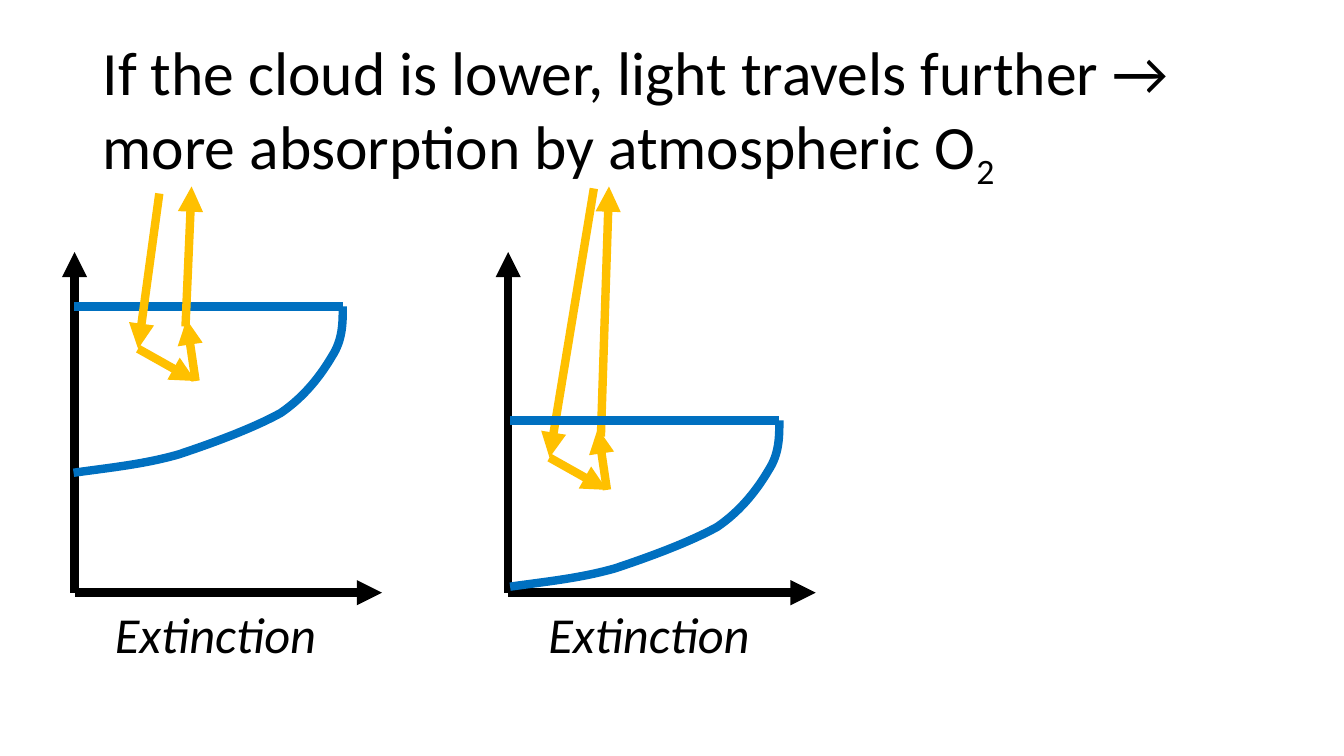
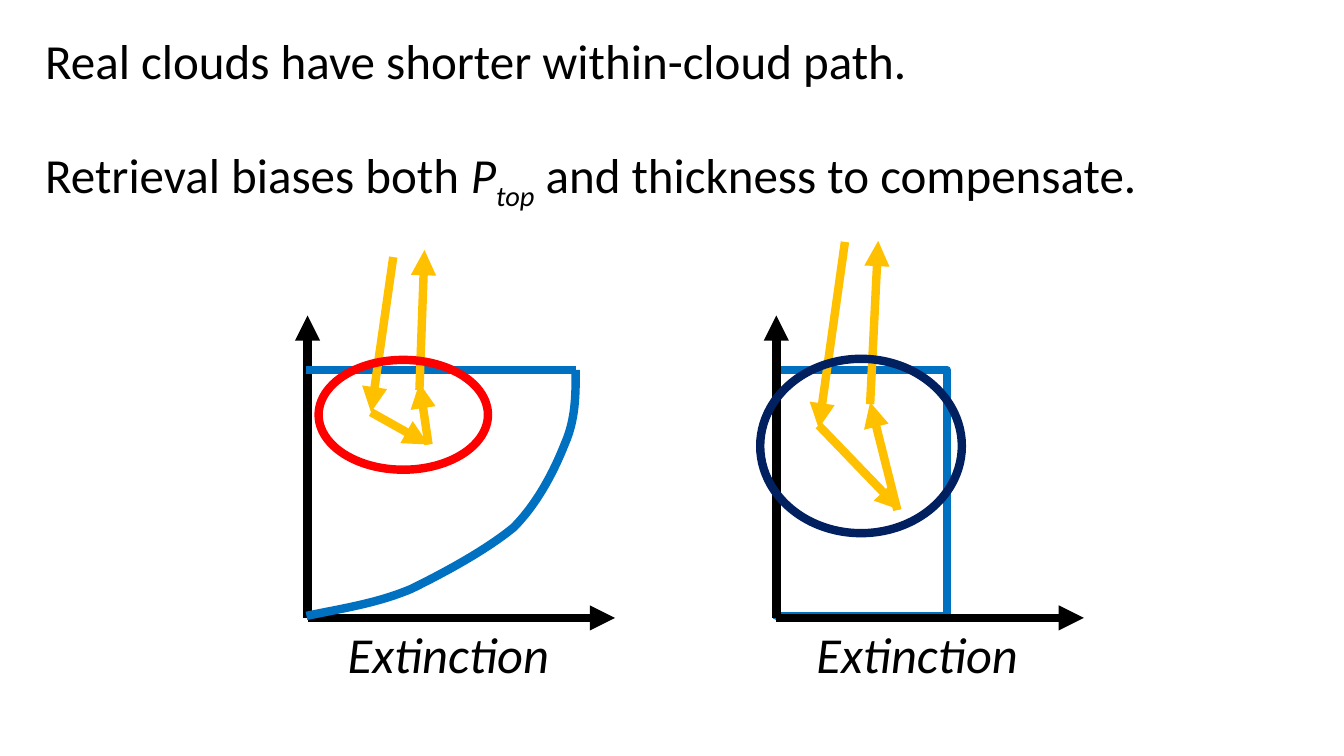
from dataclasses import dataclass

from pptx import Presentation
from pptx.dml.color import RGBColor
from pptx.enum.shapes import MSO_CONNECTOR, MSO_SHAPE
from pptx.enum.text import MSO_ANCHOR, MSO_AUTO_SIZE
from pptx.oxml.ns import qn
from pptx.oxml.xmlchemy import OxmlElement
from pptx.util import Inches, Pt


@dataclass(frozen=True)
class Theme:
    font: str = "Calibri"
    ink: str = "000000"
    cloud: str = "0070C0"
    light: str = "FFC000"
    short_path: str = "FF0000"
    long_path: str = "002060"
    line: int = 6
    label_size: int = 36
    title_size: int = 44
    statement_size: int = 35
    statement_gap: int = 40


THEME = Theme()
AXIS_WIDTH = 3.05
CLOUD_WIDTH = 2.67

# Cloud profile as fractions of its box: a start, then Bézier triples
PROFILE = [
    (1, 0),
    (1, 0.1), (1, 0.2), (0.96, 0.3),
    (0.92, 0.41), (0.86, 0.54), (0.77, 0.64),
    (0.67, 0.73), (0.52, 0.82), (0.39, 0.89),
    (0.26, 0.95), (0.13, 0.97), (0, 1),
]

# Scattering inside the cloud, measured from the point the light reaches
SHORT_SCATTER = [((0, 0), (0.57, 0.32)), ((0.57, 0.32), (0.48, -0.29))]
LONG_SCATTER = [((0, -0.03), (0.81, 0.81)), ((0.78, 0.81), (0.51, -0.26))]


def style_line(line, color):
    line.color.rgb = RGBColor.from_string(color)
    line.width = Pt(THEME.line)


def add_line(slide, start, end, color, arrow=False):
    connector = slide.shapes.add_connector(
        MSO_CONNECTOR.STRAIGHT, *(Inches(value) for value in (*start, *end)))
    style_line(connector.line, color)
    if arrow:
        tail = OxmlElement("a:tailEnd")
        tail.set("type", "triangle")
        connector.line._get_or_add_ln().append(tail)
    connector._element.spPr.append(OxmlElement("a:effectLst"))


def add_outline(slide, preset, box, color):
    shape = slide.shapes.add_shape(preset, *(Inches(value) for value in box))
    shape.shadow.inherit = False
    shape.fill.background()
    style_line(shape.line, color)


def add_text(slide, box, paragraphs, size, gap=0, italic=None):
    """Each paragraph is a list of (text, italic, subscript) runs."""
    text_box = slide.shapes.add_textbox(*(Inches(value) for value in box))
    frame = text_box.text_frame
    frame.word_wrap = True
    for index, runs in enumerate(paragraphs):
        paragraph = frame.add_paragraph() if index else frame.paragraphs[0]
        paragraph.font.name = THEME.font
        paragraph.font.size = Pt(size)
        paragraph.font.color.rgb = RGBColor.from_string(THEME.ink)
        paragraph.font.italic = italic
        if index:
            paragraph.space_before = Pt(gap)
        for text, run_italic, subscript in runs:
            run = paragraph.add_run()
            run.text = text
            if run_italic:
                run.font.italic = True
            if subscript:
                run._r.get_or_add_rPr().set("baseline", "-25000")
    return frame


def add_title(slide, box, paragraphs, size, gap=0):
    frame = add_text(slide, box, paragraphs, size, gap)
    frame.vertical_anchor = MSO_ANCHOR.MIDDLE
    for paragraph in frame.paragraphs:
        paragraph.line_spacing = 0.9


def add_axes(slide, origin, height, label_gap=0):
    x, y = origin
    add_line(slide, origin, (x, y - height), THEME.ink, arrow=True)
    add_line(slide, origin, (x + AXIS_WIDTH, y), THEME.ink, arrow=True)
    frame = add_text(slide, (x + 0.3, y + label_gap, 2.44, 0.71),
                     [[("Extinction", False, False)]], THEME.label_size, italic=True)
    frame.auto_size = MSO_AUTO_SIZE.SHAPE_TO_FIT_TEXT


def add_cloud(slide, left, top, height):
    # Curved lower edge: turn each triple of points into one Bézier segment
    points = [(Inches(left + CLOUD_WIDTH * x), Inches(top + height * y))
              for x, y in PROFILE]
    builder = slide.shapes.build_freeform(*points[0])
    builder.add_line_segments(points[1:], close=False)
    shape = builder.convert_to_shape()
    segments = list(shape._element.iter(qn("a:lnTo")))
    for index in range(0, len(segments), 3):
        curve = OxmlElement("a:cubicBezTo")
        segments[index].addprevious(curve)
        for segment in segments[index:index + 3]:
            curve.append(segment[0])
            segment.getparent().remove(segment)
    shape.shadow.inherit = False
    shape.fill.background()
    style_line(shape.line, THEME.cloud)
    # Flat cloud top
    add_line(slide, (left + CLOUD_WIDTH, top), (left, top), THEME.cloud)


def add_light(slide, hit, source, scatter, leave, escape):
    """All points are offsets from hit, where the light first scatters."""
    for start, end in [(source, (0, 0)), *scatter, (leave, escape)]:
        add_line(slide, *((hit[0] + x, hit[1] + y) for x, y in (start, end)),
                 THEME.light, arrow=True)


def build_height_slide(slide):
    add_title(slide, (0.92, 0.4, 11.5, 1.45), [[
        ("If the cloud is lower, light travels further → more absorption by atmospheric O",
         False, False),
        ("2", False, True),
    ]], THEME.title_size)
    # High cloud
    add_axes(slide, (0.74, 5.88), 3.38, label_gap=0.05)
    add_cloud(slide, 0.73, 3.04, 1.65)
    add_light(slide, (1.37, 3.46), (0.21, -1.54), SHORT_SCATTER,
              (0.47, -0.22), (0.53, -1.61))
    # Low cloud
    add_axes(slide, (5.04, 5.88), 3.38, label_gap=0.05)
    add_light(slide, (5.45, 4.54), (0.44, -2.67), SHORT_SCATTER,
              (0.51, -0.21), (0.59, -2.69))
    add_cloud(slide, 5.06, 4.17, 1.65)


def build_path_slide(slide):
    # Uniform cloud stands behind its axes
    add_outline(slide, MSO_SHAPE.RECTANGLE, (7.7, 3.67, 1.69, 2.44), THEME.cloud)
    add_title(slide, (0.35, 0.14, 11.5, 2.13), [
        [("Real clouds have shorter within-cloud path.", False, False)],
        [("Retrieval biases both ", False, False), ("P", True, False),
         ("top", True, True), (" and thickness to compensate.", False, False)],
    ], THEME.statement_size, THEME.statement_gap)
    # Real cloud
    add_axes(slide, (3.05, 6.13), 3)
    add_cloud(slide, 3.04, 3.67, 2.44)
    add_light(slide, (3.68, 4.09), (0.22, -1.54), SHORT_SCATTER,
              (0.48, -0.22), (0.53, -1.61))
    # Retrieved cloud
    add_axes(slide, (7.7, 6.13), 3)
    add_light(slide, (8.12, 4.25), (0.26, -1.85), LONG_SCATTER,
              (0.51, -0.24), (0.59, -1.86))
    # Rings around the within-cloud paths
    add_outline(slide, MSO_SHAPE.OVAL, (3.16, 3.57, 1.68, 1.09), THEME.short_path)
    add_outline(slide, MSO_SHAPE.OVAL, (7.54, 3.56, 2, 1.73), THEME.long_path)


def main():
    presentation = Presentation()
    presentation.slide_width = Inches(13.33)
    presentation.slide_height = Inches(7.5)
    blank = presentation.slide_layouts[6]
    for build in (build_height_slide, build_path_slide):
        build(presentation.slides.add_slide(blank))
    presentation.save("out.pptx")


if __name__ == "__main__":
    main()
